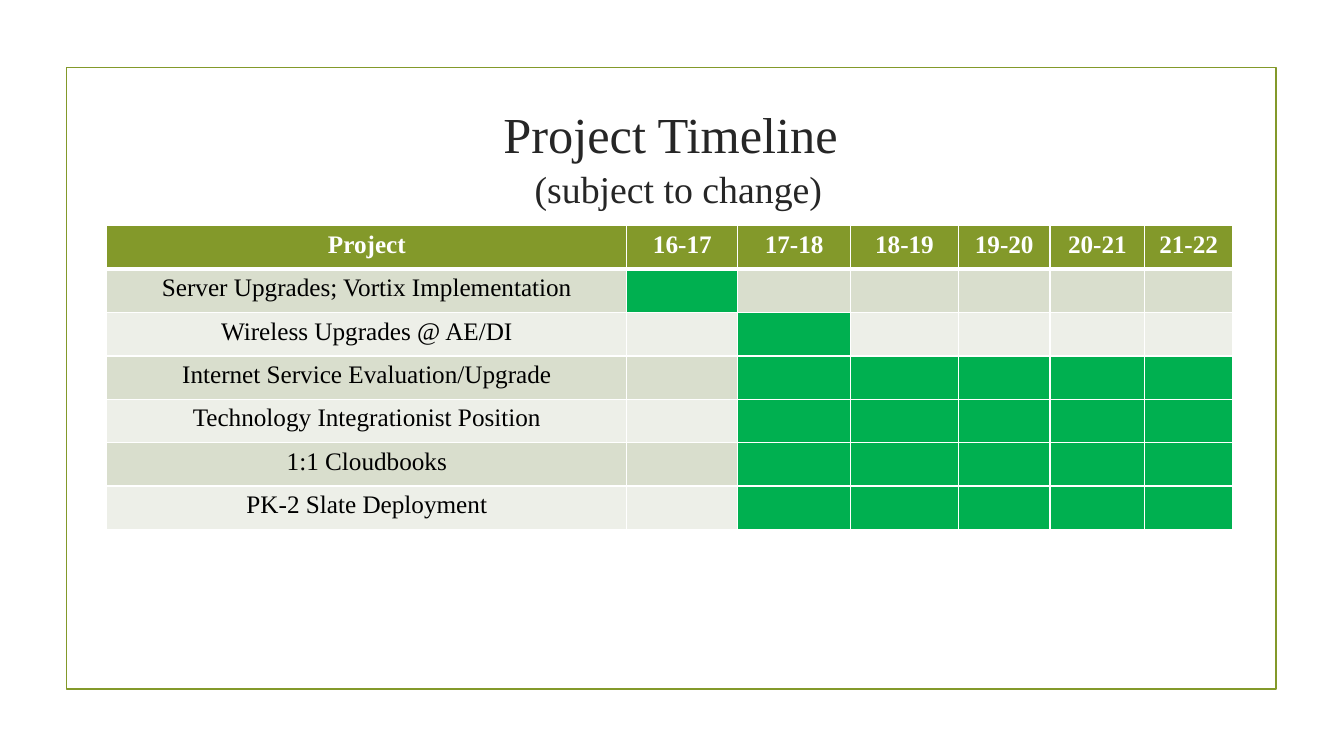
from dataclasses import dataclass

from lxml import etree
from pptx import Presentation
from pptx.dml.color import RGBColor
from pptx.enum.shapes import MSO_SHAPE
from pptx.enum.text import MSO_ANCHOR, MSO_AUTO_SIZE, PP_ALIGN
from pptx.oxml.ns import qn
from pptx.util import Pt

RECTANGLE = MSO_SHAPE.RECTANGLE
MIDDLE = MSO_ANCHOR.MIDDLE
CENTER = PP_ALIGN.CENTER
NO_AUTOFIT = MSO_AUTO_SIZE.NONE

HEADING = "Project Timeline"
SUBHEADING = "(subject to change)"
YEARS = ["16-17", "17-18", "18-19", "19-20", "20-21", "21-22"]
PROJECTS = [
    ("Server Upgrades; Vortix Implementation", "16-17", "16-17"),
    ("Wireless Upgrades @ AE/DI", "17-18", "17-18"),
    ("Internet Service Evaluation/Upgrade", "17-18", "21-22"),
    ("Technology Integrationist Position", "17-18", "21-22"),
    ("1:1 Cloudbooks", "17-18", "21-22"),
    ("PK-2 Slate Deployment", "17-18", "21-22"),
]
COLUMN_WIDTHS = [371.5, 79.2, 80.6, 77, 65.5, 67.7, 62.6]
ROW_HEIGHT = 31
TABLE_LEFT, TABLE_TOP = 76.3, 161.3
FRAME_BOX = (47.5, 48.2, 864, 444.2)
TITLE_BOX = (106.6, 53.3, 756, 103)


@dataclass(frozen=True)
class Theme:
    font: str = "Times New Roman"
    olive: str = "83992A"
    ink: str = "262626"
    black: str = "000000"
    white: str = "FFFFFF"
    active: str = "00B050"
    bands: tuple = ("D9DECD", "EDEFE8")
    heading_size: float = 36
    gap_size: float = 44
    subheading_size: float = 27
    cell_size: float = 18
    frame_line: float = 1.25
    grid_line: float = 1
    header_line: float = 3


THEME = Theme()


def add_run(paragraph, text, size, color, bold=False):
    run = paragraph.add_run()
    run.text = text
    run.font.name = THEME.font
    run.font.size = Pt(size)
    run.font.bold = bold
    run.font.color.rgb = RGBColor.from_string(color)


def add_border(cell, side, width):
    border = etree.SubElement(
        cell._tc.get_or_add_tcPr(), qn(f"a:ln{side}"), w=str(Pt(width))
    )
    fill = etree.SubElement(border, qn("a:solidFill"))
    etree.SubElement(fill, qn("a:srgbClr"), val=THEME.white)


def style_cell(cell, fill, top, bottom):
    for side, width in zip(
        "LRTB", (THEME.grid_line, THEME.grid_line, top, bottom)
    ):
        add_border(cell, side, width)
    cell.fill.solid()
    cell.fill.fore_color.rgb = RGBColor.from_string(fill)


def write_cell(cell, text, color, bold=False):
    paragraph = cell.text_frame.paragraphs[0]
    paragraph.alignment = CENTER
    add_run(paragraph, text, THEME.cell_size, color, bold)


def add_frame(slide):
    frame = slide.shapes.add_shape(RECTANGLE, *map(Pt, FRAME_BOX))
    frame.shadow.inherit = False
    frame.fill.background()
    frame.line.color.rgb = RGBColor.from_string(THEME.olive)
    frame.line.width = Pt(THEME.frame_line)


def fill_title(slide):
    title = slide.shapes.title
    title.left, title.top, title.width, title.height = map(Pt, TITLE_BOX)
    title_text = title.text_frame
    title_text.auto_size = NO_AUTOFIT
    title_text.word_wrap = True
    title_text.vertical_anchor = MIDDLE
    title_text.margin_top = Pt(10.8)
    paragraph = title_text.paragraphs[0]
    paragraph.alignment = CENTER
    add_run(paragraph, HEADING, THEME.heading_size, THEME.ink)
    add_run(paragraph, " ", THEME.gap_size, THEME.ink)
    paragraph.add_line_break()
    add_run(paragraph, SUBHEADING, THEME.subheading_size, THEME.ink)


def add_timeline(slide):
    row_count = len(PROJECTS) + 1
    timeline = slide.shapes.add_table(
        row_count, len(COLUMN_WIDTHS), Pt(TABLE_LEFT), Pt(TABLE_TOP),
        Pt(sum(COLUMN_WIDTHS)), Pt(ROW_HEIGHT * row_count),
    ).table
    for column, width in zip(timeline.columns, COLUMN_WIDTHS):
        column.width = Pt(width)
    for row in timeline.rows:
        row.height = Pt(ROW_HEIGHT)

    for index, label in enumerate(["Project", *YEARS]):
        header = timeline.cell(0, index)
        style_cell(header, THEME.olive, THEME.grid_line, THEME.header_line)
        write_cell(header, label, THEME.white, bold=True)

    for number, (project, first, last) in enumerate(PROJECTS, start=1):
        band = THEME.bands[(number - 1) % 2]
        top = THEME.header_line if number == 1 else THEME.grid_line
        name = timeline.cell(number, 0)
        style_cell(name, band, top, THEME.grid_line)
        write_cell(name, project, THEME.black)
        for index, year in enumerate(YEARS, start=1):
            fill = THEME.active if first <= year <= last else band
            style_cell(timeline.cell(number, index), fill, top, THEME.grid_line)


def main():
    deck = Presentation()
    deck.slide_width, deck.slide_height = Pt(960), Pt(540)
    slide = deck.slides.add_slide(deck.slide_layouts[5])
    add_frame(slide)
    fill_title(slide)
    add_timeline(slide)
    deck.save("out.pptx")


if __name__ == "__main__":
    main()
